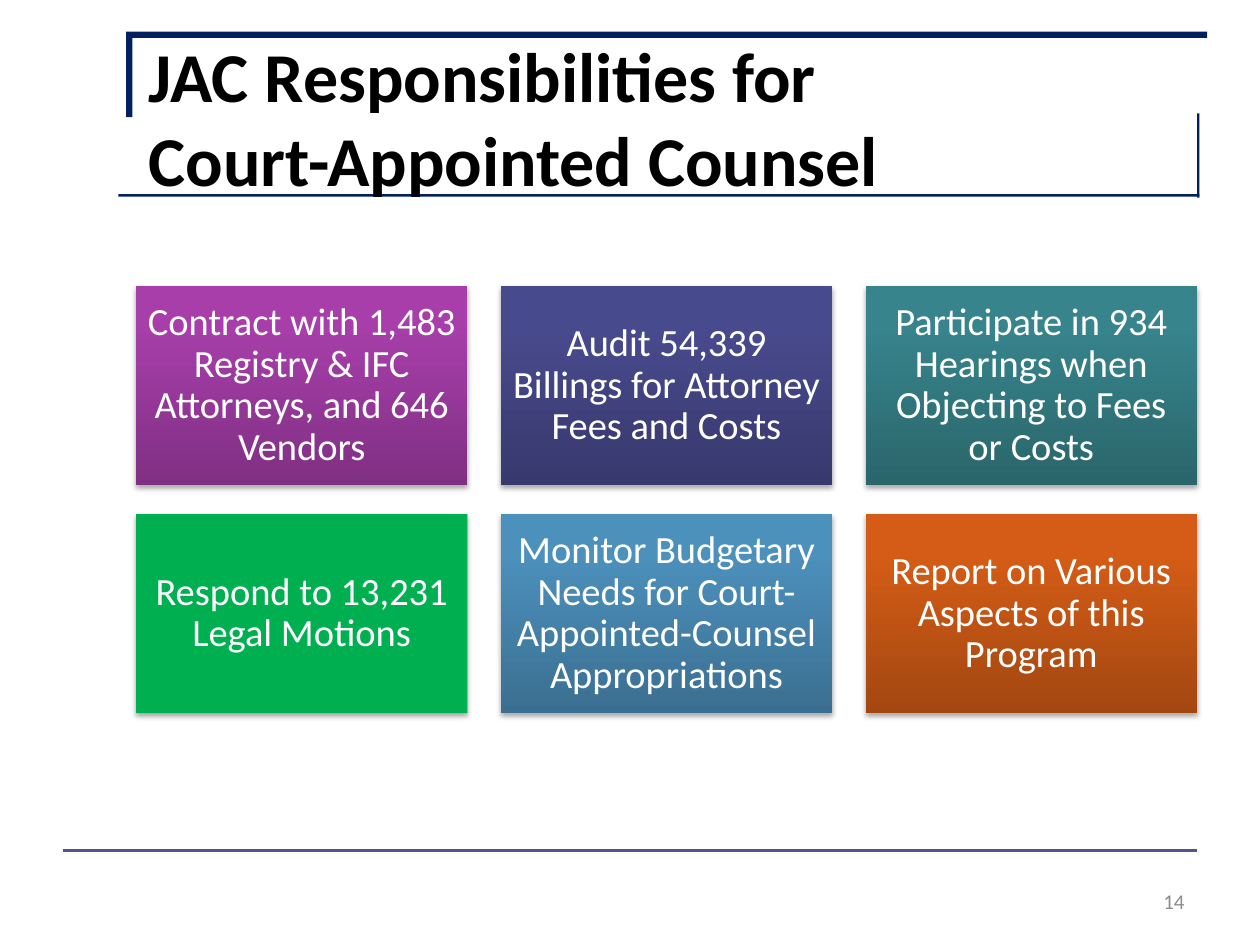
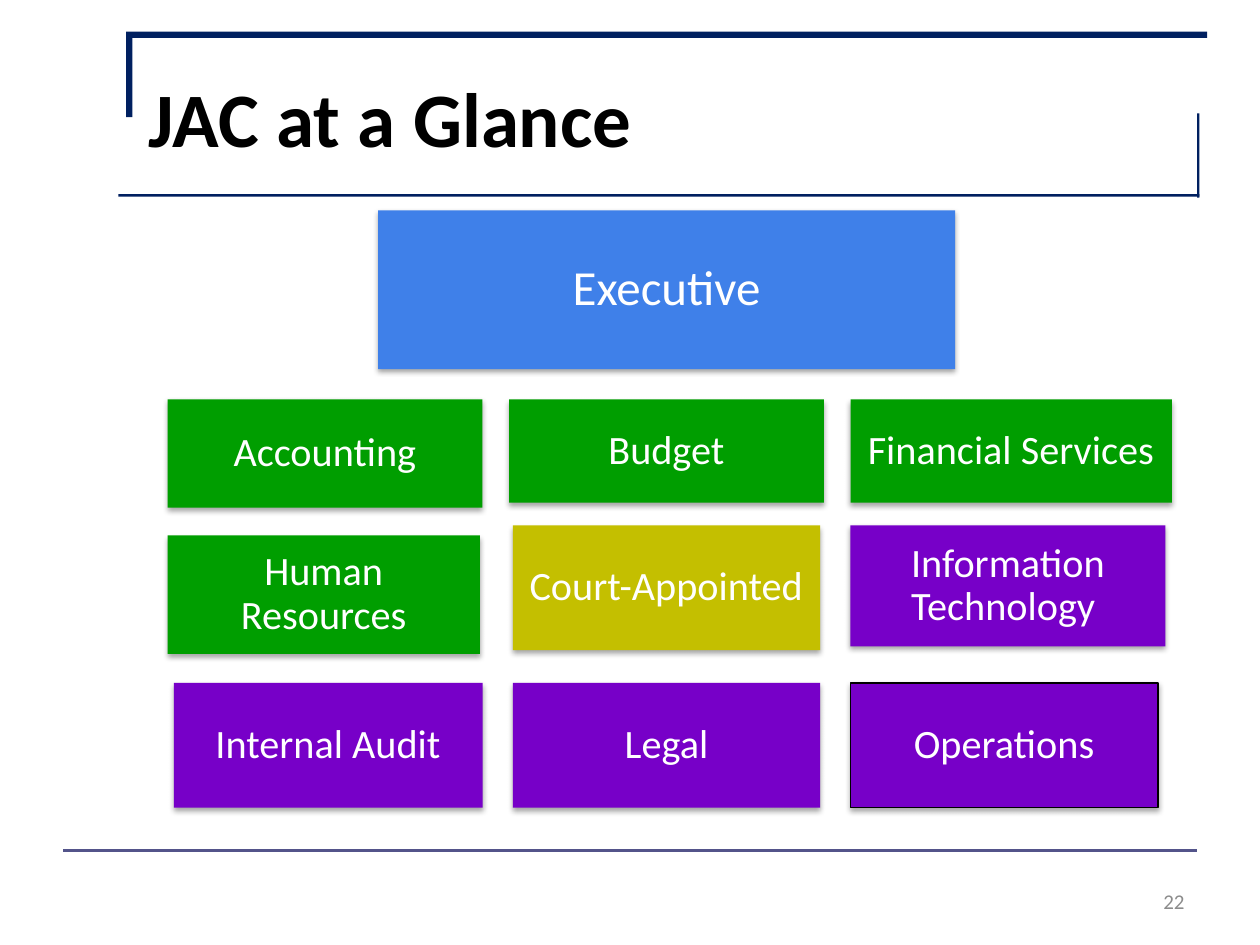
"""Build two slides on JAC: its court-appointed counsel duties and its sections."""
import pptx
import pptx.dml.color
import pptx.enum.shapes
import pptx.enum.text
import pptx.oxml.ns
import pptx.util
from lxml import etree

Inches = pptx.util.Inches
Pt = pptx.util.Pt
ALIGN = pptx.enum.text.PP_ALIGN
MIDDLE = pptx.enum.text.MSO_ANCHOR.MIDDLE
RECT = pptx.enum.shapes.MSO_SHAPE.RECTANGLE
FONT = "Calibri"
NAVY, RULE, GREY, BLACK, WHITE = "002060", "53548A", "8C8C8C", "000000", "FFFFFF"
GREEN, PURPLE, OLIVE, BLUE = "009E00", "7700C8", "C4BF00", "3F80E9"
LEFT, CONTENT_W = 1.08, 8.42


def rgb(value):
    return pptx.dml.color.RGBColor.from_string(value)


def add_box(s, text, x, y, w, h, fill, size, inset, line=None):
    sp = s.shapes.add_shape(RECT, Inches(x), Inches(y), Inches(w), Inches(h))
    if isinstance(fill, tuple):
        sp.fill.gradient()
        sp.fill.gradient_angle = 90
        for stop, color, position in zip(sp.fill.gradient_stops, fill, (0, 0.8)):
            stop.color.rgb = rgb(color)
            stop.position = position
    else:
        sp.fill.solid()
        sp.fill.fore_color.rgb = rgb(fill)
    if line:
        sp.line.color.rgb = rgb(line)
        sp.line.width = Pt(0.75)
    else:
        sp.line.fill.background()
    sp.shadow.inherit = False
    effects = sp.element.spPr.find(pptx.oxml.ns.qn("a:effectLst"))
    shadow = etree.SubElement(effects, pptx.oxml.ns.qn("a:outerShdw"), blurRad="40000",
                              dist="23000", dir="5400000", rotWithShape="0")
    color = etree.SubElement(shadow, pptx.oxml.ns.qn("a:srgbClr"), val=BLACK)
    etree.SubElement(color, pptx.oxml.ns.qn("a:alpha"), val="35000")
    tf = sp.text_frame
    tf.word_wrap = True
    tf.vertical_anchor = MIDDLE
    tf.margin_left = tf.margin_right = tf.margin_top = tf.margin_bottom = Inches(inset)
    tf.text = text
    p = tf.paragraphs[0]
    p.alignment = ALIGN.CENTER
    p.line_spacing = 0.9
    font = p.runs[0].font
    font.name, font.size, font.color.rgb = FONT, Pt(size), rgb(WHITE)


prs = pptx.Presentation()
prs.slide_width, prs.slide_height = Inches(10), Inches(7.5)
layout = prs.slide_layouts[5]

slides = []
for title, size, number in [
    ("JAC Responsibilities for\vCourt-Appointed Counsel", 40, "14"),
    ("JAC at a Glance", 44, "22"),
]:
    s = prs.slides.add_slide(layout)
    slides.append(s)
    sp = s.shapes.title
    sp.left, sp.top = Inches(LEFT), Inches(0.3)
    sp.width, sp.height = Inches(CONTENT_W), Inches(1.25)
    page = s.shapes.add_textbox(Inches(7.17), Inches(6.95), Inches(2.33), Inches(0.4))
    for shape, text, points, color, bold, align in [
        (sp, title, size, BLACK, True, ALIGN.LEFT),
        (page, number, 12, GREY, False, ALIGN.RIGHT),
    ]:
        tf = shape.text_frame
        tf.word_wrap = True
        tf.auto_size = pptx.enum.text.MSO_AUTO_SIZE.NONE
        tf.vertical_anchor = MIDDLE
        tf.text = text
        p = tf.paragraphs[0]
        p.alignment = align
        for r in p.runs:
            r.font.name, r.font.size, r.font.bold = FONT, Pt(points), bold
            r.font.color.rgb = rgb(color)

duties, glance = slides

frame = []
for x, y, w, h in [(0.94, 1.54, 8.58, 0.02), (1, 0.25, 8.58, 0.05),
                   (1, 0.26, 0.05, 0.67), (9.5, 0.9, 0.02, 0.67)]:
    sp = duties.shapes.add_shape(RECT, Inches(x), Inches(y), Inches(w), Inches(h))
    sp.fill.solid()
    sp.fill.fore_color.rgb = rgb(NAVY)
    sp.line.fill.background()
    sp.shadow.inherit = False
    frame.append(sp)
rule = duties.shapes.add_connector(pptx.enum.shapes.MSO_CONNECTOR.STRAIGHT,
                                   Inches(0.5), Inches(6.75), Inches(9.5), Inches(6.75))
rule.line.color.rgb = rgb(RULE)
rule.line.width = Pt(1.5)
etree.SubElement(rule.element.spPr, pptx.oxml.ns.qn("a:effectLst"))
for sp in frame + [rule]:
    layout.shapes.element.append(sp.element)

box_w, box_h = 2.63, 1.58
step_x = (CONTENT_W - box_w) / 2
for i, (text, fill) in enumerate([
    ("Contract with 1,483 Registry & IFC Attorneys, and 646 Vendors", ("803083", "A73EAA")),
    ("Audit 54,339 Billings for Attorney Fees and Costs", ("38396D", "484A8E")),
    ("Participate in 934 Hearings when Objecting to Fees or Costs", ("2A666B", "37848C")),
    ("Respond to 13,231 Legal Motions", "00B050"),
    ("Monitor Budgetary Needs for Court-Appointed-Counsel Appropriations",
     ("3B6F91", "4C90BC")),
    ("Report on Various Aspects of this Program", ("A34711", "D45C16")),
]):
    row, col = divmod(i, 3)
    add_box(duties, text, LEFT + col * step_x, 2.27 + row * 1.81, box_w, box_h, fill, 22, 0.09)

add_box(glance, "Executive", 3, 1.67, 4.58, 1.26, BLUE, 28, 0.12)
for text, x, y, w, h, fill, line in [
    ("Accounting", 1.33, 3.17, 2.5, 0.86, GREEN, None),
    ("Budget", 4.04, 3.17, 2.5, 0.82, GREEN, None),
    ("Financial Services", 6.75, 3.17, 2.55, 0.82, GREEN, None),
    ("Human Resources", 1.33, 4.25, 2.48, 0.94, GREEN, None),
    ("Court-Appointed", 4.07, 4.17, 2.44, 0.99, OLIVE, None),
    ("Information Technology ", 6.75, 4.17, 2.5, 0.96, PURPLE, None),
    ("Internal Audit", 1.38, 5.42, 2.45, 0.99, PURPLE, None),
    ("Legal", 4.07, 5.42, 2.44, 0.99, PURPLE, None),
    ("Operations", 6.75, 5.42, 2.44, 0.99, PURPLE, BLACK),
]:
    add_box(glance, text, x, y, w, h, fill, 23, 0.1, line)

prs.save("out.pptx")
